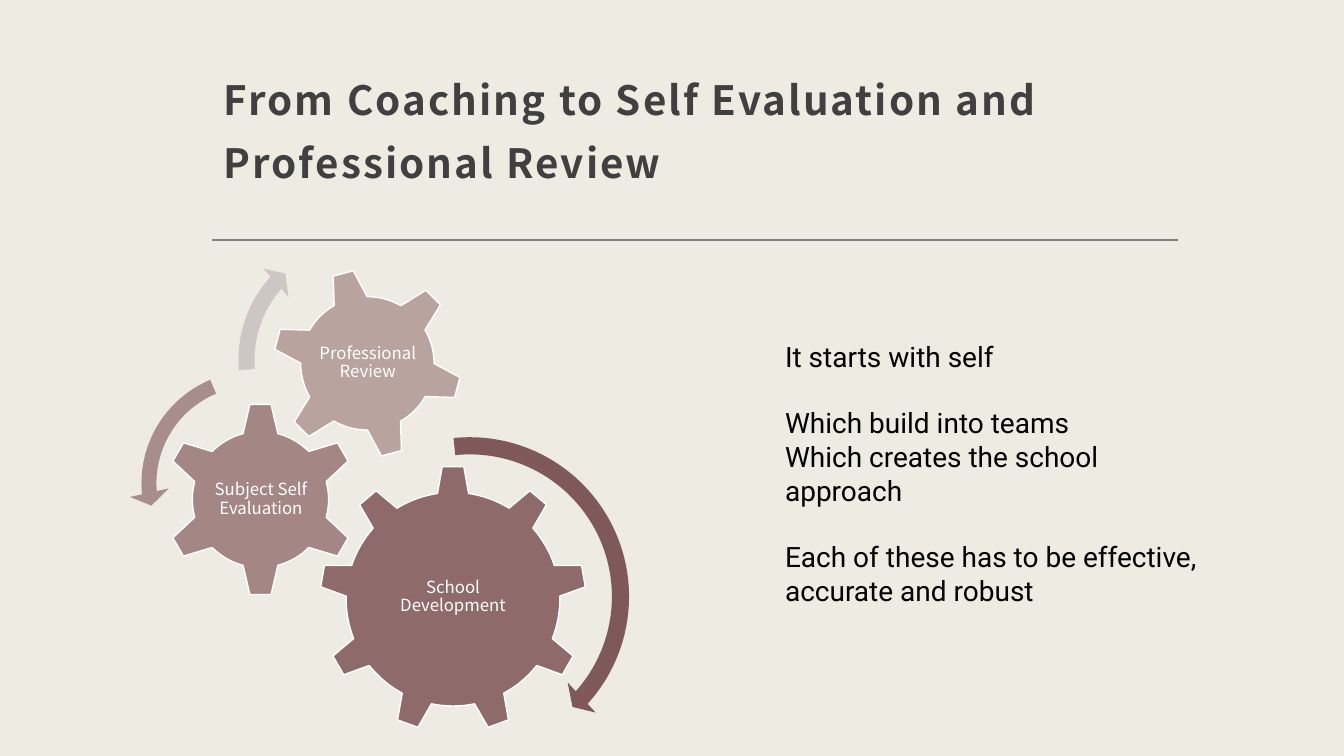
from lxml import etree
from pptx import Presentation
from pptx.dml.color import RGBColor
from pptx.enum.shapes import MSO_CONNECTOR, MSO_SHAPE
from pptx.enum.text import MSO_ANCHOR, PP_ALIGN
from pptx.oxml.ns import qn
from pptx.util import Pt

GEAR_6 = MSO_SHAPE.GEAR_6
GEAR_9 = MSO_SHAPE.GEAR_9
CLOCKWISE = MSO_SHAPE.CIRCULAR_ARROW
COUNTERCLOCKWISE = MSO_SHAPE.LEFT_CIRCULAR_ARROW
STRAIGHT = MSO_CONNECTOR.STRAIGHT
TOP, MIDDLE, BOTTOM = MSO_ANCHOR.TOP, MSO_ANCHOR.MIDDLE, MSO_ANCHOR.BOTTOM
LEFT, CENTER = PP_ALIGN.LEFT, PP_ALIGN.CENTER

HEADING_FONT = "Noto Sans CJK JP"
BODY_FONT = "Roboto"
COLORS = {
    "background": "EEEBE2",
    "rule": "808080",
    "title": "404040",
    "body": "000000",
    "white": "FFFFFF",
    "gear": "855D5D",
    "school_arrow": "7F5959",
    "subject_arrow": "A88D8D",
    "review_arrow": "CEC5C5",
}


def rgb(name):
    return RGBColor.from_string(COLORS[name])


def add_text(slide, text, box, *, size, color, font=HEADING_FONT, bold=False,
             align=LEFT, anchor=TOP, insets=(7.2, 3.6, 7.2, 3.6),
             line_spacing=1.0, tracking=0, gaps=()):
    frame = slide.shapes.add_textbox(*map(Pt, box)).text_frame
    frame.word_wrap = True
    frame.vertical_anchor = anchor
    (frame.margin_left, frame.margin_top,
     frame.margin_right, frame.margin_bottom) = map(Pt, insets)
    frame.text = text
    for index, paragraph in enumerate(frame.paragraphs):
        paragraph.alignment = align
        paragraph.line_spacing = line_spacing
        if index in gaps:
            paragraph.space_before = Pt(size * 1.17)
        for run in paragraph.runs:
            run.font.name = font
            run.font.size = Pt(size)
            run.font.bold = bold
            run.font.color.rgb = rgb(color)
            if tracking:
                run.font._element.set("spc", str(int(tracking * 100)))


def add_filled(slide, kind, left, top, side, color):
    shape = slide.shapes.add_shape(kind, Pt(left), Pt(top), Pt(side), Pt(side))
    shape.shadow.inherit = False
    shape.fill.solid()
    shape.fill.fore_color.rgb = rgb(color)
    return shape


def add_gear(slide, kind, left, top, side, opacity, label, label_box, rotation=0):
    gear = add_filled(slide, kind, left, top, side, "gear")
    gear.rotation = rotation
    gear.line.color.rgb = rgb("white")
    gear.line.width = Pt(1)
    tint = gear._element.spPr.find(qn("a:solidFill")).find(qn("a:srgbClr"))
    etree.SubElement(tint, qn("a:alpha")).set("val", str(opacity * 1000))
    add_text(slide, label, label_box, size=12, color="white", align=CENTER,
             anchor=MIDDLE, insets=(1.2,) * 4, line_spacing=0.9)


def add_turn_arrow(slide, kind, left, top, side, color, adjustments):
    arrow = add_filled(slide, kind, left, top, side, color)
    arrow.line.fill.background()
    for index, value in enumerate(adjustments):
        arrow.adjustments[index] = value


def add_rule(slide, left, right, y):
    rule = slide.shapes.add_connector(STRAIGHT, Pt(left), Pt(y), Pt(right), Pt(y))
    rule.line.color.rgb = rgb("rule")
    rule.line.width = Pt(2)
    etree.SubElement(rule._element.spPr, qn("a:effectLst"))


def main():
    deck = Presentation()
    deck.slide_width, deck.slide_height = Pt(960), Pt(540)
    slide = deck.slides.add_slide(deck.slide_layouts[6])
    slide.background.fill.solid()
    slide.background.fill.fore_color.rgb = rgb("background")

    add_rule(slide, 151.2, 841.7, 171.4)
    add_text(slide, "From Coaching to Self Evaluation and Professional Review",
             (151.2, 34.6, 690.5, 105.8), size=28.8, color="title", bold=True,
             anchor=BOTTOM, insets=(8.64, 8.64, 8.64, 7.2),
             line_spacing=1.3, tracking=1.5)

    add_gear(slide, GEAR_9, 228.2, 332.6, 190.8, 90, "School Development",
             (266.4, 377.3, 114.5, 97.9))
    add_gear(slide, GEAR_6, 116.6, 287.3, 139, 70, "Subject Self Evaluation",
             (151.9, 322.6, 69.1, 68.4))
    add_gear(slide, GEAR_6, 194.4, 191.5, 136.1, 50, "Professional Review",
             (224.6, 221, 76.3, 76.3), rotation=345)

    add_turn_arrow(slide, CLOCKWISE, 213.1, 303.8, 244.8, "school_arrow",
                   (0.05, 2.99, 25.21, 158.51, 0.06))
    add_turn_arrow(slide, COUNTERCLOCKWISE, 92.2, 256.3, 177.8, "subject_arrow",
                   (0.06, 4.3, 104.89, 148.38, 0.08))
    add_turn_arrow(slide, CLOCKWISE, 162.7, 161.3, 191.5, "review_arrow",
                   (0.06, 3.94, 133.14, 105.08, 0.07))

    statements = [
        "It starts with self",
        "Which build into teams",
        "Which creates the school approach",
        "Each of these has to be effective, accurate and robust",
    ]
    add_text(slide, "\n".join(statements), (553.7, 239, 326.2, 177.1),
             size=20, color="body", font=BODY_FONT, gaps=(1, 3))

    deck.save("out.pptx")


if __name__ == "__main__":
    main()
